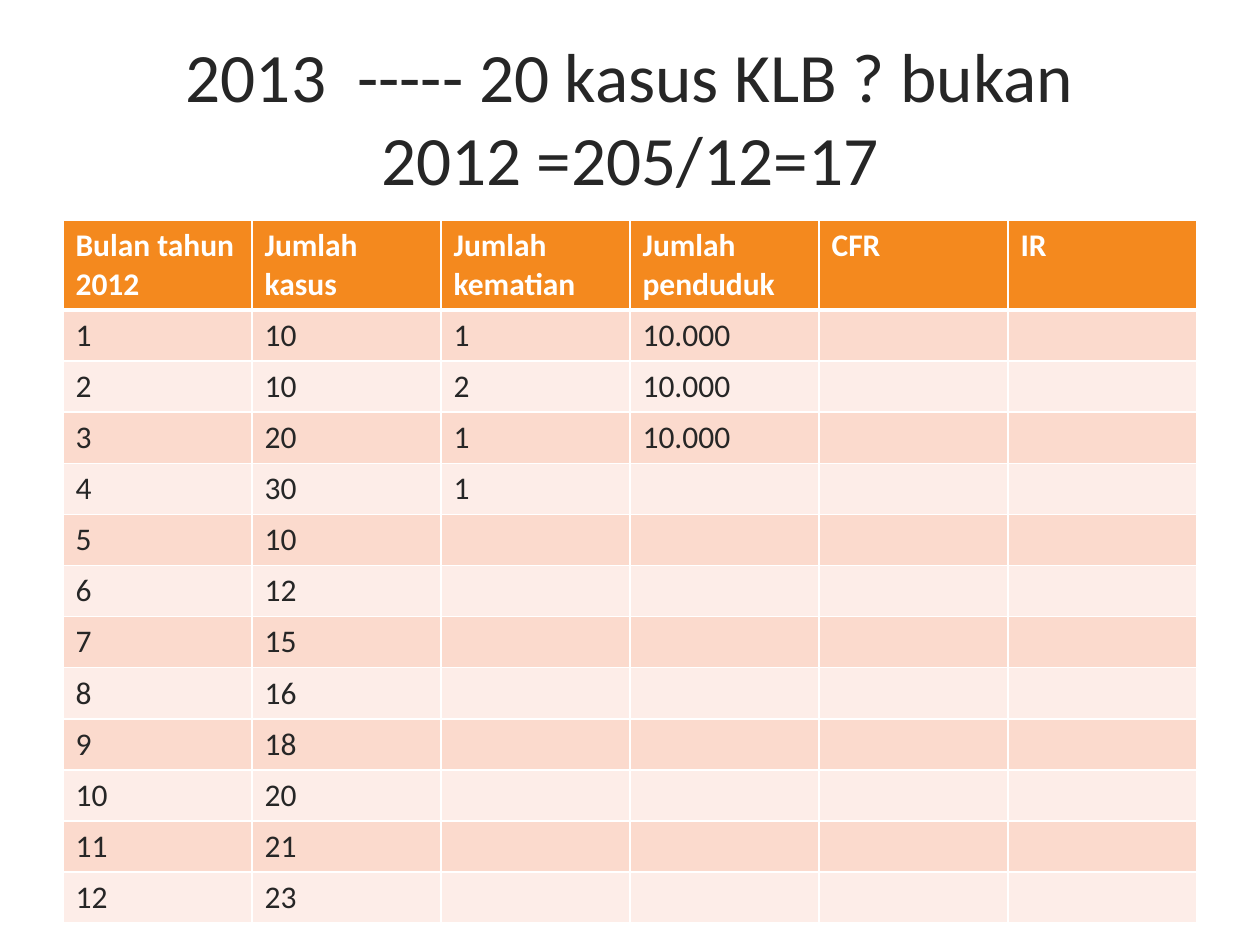
from dataclasses import dataclass

from lxml.etree import SubElement
from pptx import Presentation
from pptx.dml.color import RGBColor
from pptx.enum.text import MSO_ANCHOR, MSO_AUTO_SIZE, PP_ALIGN
from pptx.oxml.ns import qn
from pptx.util import Inches, Pt


@dataclass(frozen=True)
class Theme:
    font: str = "Calibri"
    title_size: float = 39.6
    table_size: float = 18
    ink: str = "262626"
    white: str = "FFFFFF"
    header: str = "F4891E"
    bands: tuple = ("FBDACD", "FDEDE8")
    line: float = 1
    header_line: float = 3


THEME = Theme()

TITLE_LINES = ["2013  ----- 20 kasus KLB ? bukan", "2012 =205/12=17"]
HEADERS = ["Bulan tahun 2012", "Jumlah kasus", "Jumlah kematian",
           "Jumlah penduduk", "CFR", "IR"]
CASES = [10, 10, 20, 30, 10, 12, 15, 16, 18, 20, 21, 23]
DEATHS = [1, 2, 1, 1]
POPULATION = ["10.000"] * 3

TABLE_HEIGHT = 5.57
HEADER_HEIGHT = 0.7


def add_run(p, text, size, color, bold=False):
    r = p.add_run()
    r.text = text
    r.font.name = THEME.font
    r.font.size = Pt(size)
    r.font.bold = bold
    r.font.color.rgb = RGBColor.from_string(color)


def set_title(s, lines):
    sp = s.shapes.title
    sp.left, sp.top = Inches(0.5), Inches(0.3)
    sp.width, sp.height = Inches(9), Inches(1.25)
    tf = sp.text_frame
    tf.word_wrap = True
    tf.auto_size = MSO_AUTO_SIZE.NONE
    tf.vertical_anchor = MSO_ANCHOR.MIDDLE
    p = tf.paragraphs[0]
    p.alignment = PP_ALIGN.CENTER
    for i, line in enumerate(lines):
        if i:
            p.add_line_break()
        add_run(p, line, THEME.title_size, THEME.ink)


def set_borders(cell, widths):
    """Draw the cell borders; they must come before the fill in the XML."""
    tc_pr = cell._tc.get_or_add_tcPr()
    for side, width in widths.items():
        ln = SubElement(tc_pr, qn(f"a:ln{side}"), w=str(Pt(width)))
        fill = SubElement(ln, qn("a:solidFill"))
        SubElement(fill, qn("a:srgbClr"), val=THEME.white)


def format_cell(cell, text, row):
    is_header = row == 0
    set_borders(cell, {
        "L": THEME.line,
        "R": THEME.line,
        "T": THEME.header_line if row == 1 else THEME.line,
        "B": THEME.header_line if is_header else THEME.line,
    })
    cell.fill.solid()
    cell.fill.fore_color.rgb = RGBColor.from_string(
        THEME.header if is_header else THEME.bands[(row - 1) % 2])
    p = cell.text_frame.paragraphs[0]
    if text:
        add_run(p, text, THEME.table_size,
                THEME.white if is_header else THEME.ink, is_header)
    else:
        p.font.size = Pt(THEME.table_size)


def month_rows():
    """One row per month; columns without a figure stay empty."""
    for i, cases in enumerate(CASES):
        deaths = str(DEATHS[i]) if i < len(DEATHS) else ""
        population = POPULATION[i] if i < len(POPULATION) else ""
        yield [str(i + 1), str(cases), deaths, population, "", ""]


def add_case_table(s):
    rows = [HEADERS, *month_rows()]
    table = s.shapes.add_table(
        len(rows), len(HEADERS), Inches(0.5), Inches(1.75),
        Inches(9), Inches(TABLE_HEIGHT)).table
    body_height = (TABLE_HEIGHT - HEADER_HEIGHT) / len(CASES)
    for r, values in enumerate(rows):
        table.rows[r].height = Inches(body_height if r else HEADER_HEIGHT)
        for c, text in enumerate(values):
            format_cell(table.cell(r, c), text, r)


def main():
    prs = Presentation()
    prs.slide_width, prs.slide_height = Inches(10), Inches(7.5)
    s = prs.slides.add_slide(prs.slide_layouts[5])  # title only

    # Question in the title
    set_title(s, TITLE_LINES)

    # Monthly cases
    add_case_table(s)

    prs.save("out.pptx")


if __name__ == "__main__":
    main()
